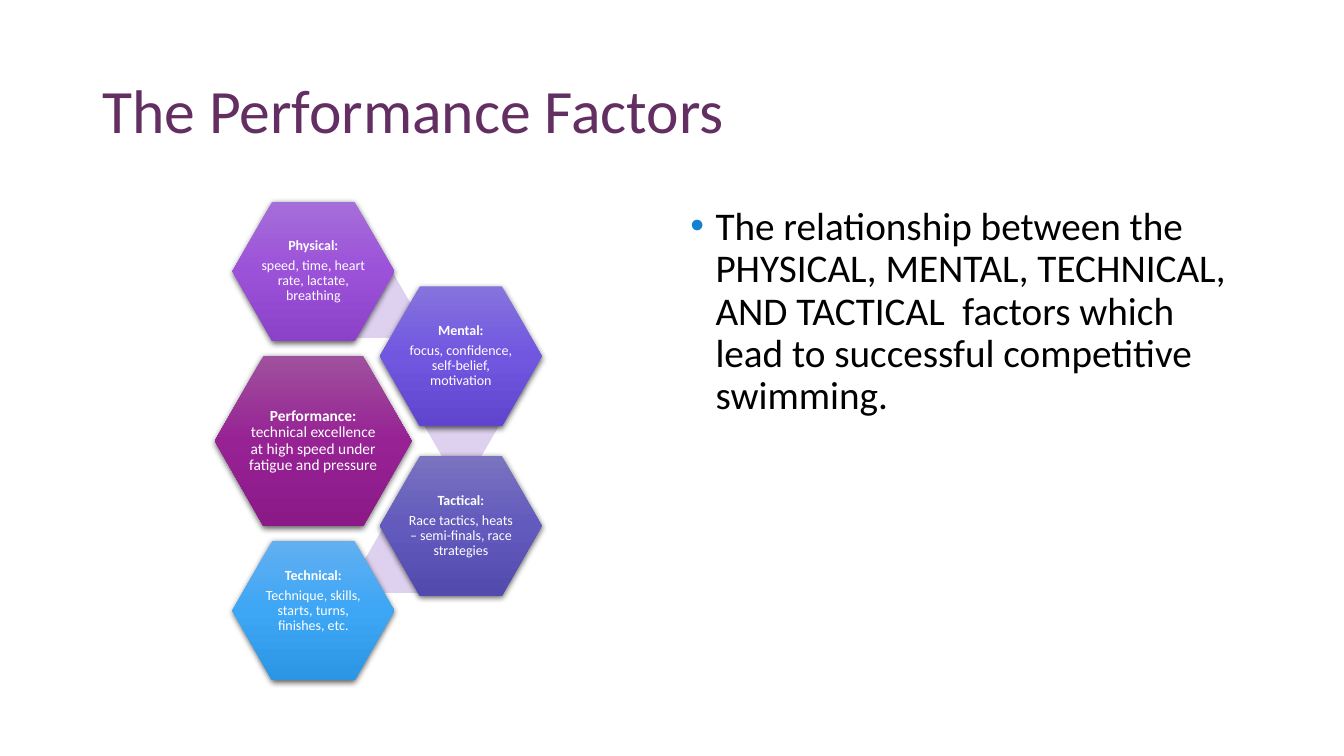
from lxml.etree import SubElement
from pptx import Presentation
from pptx.dml.color import RGBColor
from pptx.enum.shapes import MSO_SHAPE
from pptx.enum.text import MSO_ANCHOR, PP_ALIGN
from pptx.oxml import parse_xml
from pptx.oxml.ns import nsdecls, qn
from pptx.util import Pt

FONT = "Calibri"
TITLE = "The Performance Factors"
BODY = ("The relationship between the PHYSICAL, MENTAL, TECHNICAL, AND TACTICAL  "
        "factors which lead to successful competitive swimming.")
COLORS = {"title": "632E62", "body": "000000", "bullet": "1480D1",
          "link": "DED1EF", "label": "FFFFFF", "shadow": "000000"}

# Heading, detail, column, steps from the middle row, gradient, space kept below the text
FACTORS = [
    ("Physical:", "speed, time, heart rate, lactate, breathing",
     "left", -2, ("A66ED9", "9C51D9", "8B41C8"), 1),
    ("Mental:", "focus, confidence, self-belief, motivation",
     "right", -1, ("8673DE", "7157DF", "6046CE"), 1),
    ("Tactical:", "Race tactics, heats – semi-finals, race strategies",
     "right", 1, ("7973C0", "625ABD", "534AAD"), 1),
    ("Technical:", "Technique, skills, starts, turns, finishes, etc.",
     "left", 2, ("62AFF1", "3DA6F5", "2C95E4"), 15),
]
PERFORMANCE = ("Performance: ", "technical excellence at high speed under fatigue and pressure")
PERFORMANCE_GRADIENT = ("9F519D", "972294", "8B1988")

COLUMN_CENTERS = {"left": 223.8, "right": 329.2}
MIDDLE_ROW, ROW_STEP = 315, 60.6
PERFORMANCE_SIZE, FACTOR_SIZE, LINK_SIZE = (140.6, 121.6), (115.5, 99.6), (53.3, 45.5)
LINK_CENTERS = [(267.8, 218.6), (329.8, 304.2), (286.6, 400.7)]


def style_run(run, size, color, bold=False):
    run.font.name = FONT
    run.font.size = Pt(size)
    run.font.bold = bold
    run.font.color.rgb = RGBColor.from_string(COLORS[color])


def add_text(slide, box, text, size, color):
    text_frame = slide.shapes.add_textbox(*map(Pt, box)).text_frame
    text_frame.word_wrap = True
    text_frame.text = text
    style_run(text_frame.paragraphs[0].runs[0], size, color)
    return text_frame


def add_hexagon(slide, center, size, adjustment):
    (x, y), (width, height) = center, size
    shape = slide.shapes.add_shape(MSO_SHAPE.HEXAGON, Pt(x - width / 2), Pt(y - height / 2),
                                   Pt(width), Pt(height))
    shape.adjustments[0] = adjustment
    shape.shadow.inherit = False
    shape.line.fill.background()
    return shape


def add_link(slide, center):
    shape = add_hexagon(slide, center, LINK_SIZE, 0.289)
    shape.fill.solid()
    shape.fill.fore_color.rgb = RGBColor.from_string(COLORS["link"])


def add_cell(slide, center, size, gradient, inset, bottom_inset):
    """Add a hexagon with a top-to-bottom gradient and a soft shadow; return its text frame."""
    shape = add_hexagon(slide, center, size, 0.286)
    shape.fill.background()
    properties = shape._element.spPr
    stops = "".join(f'<a:gs pos="{index * 50000}"><a:srgbClr val="{color}"/></a:gs>'
                    for index, color in enumerate(gradient))
    properties.replace(properties.find(qn("a:noFill")), parse_xml(
        f'<a:gradFill {nsdecls("a")} rotWithShape="1"><a:gsLst>{stops}</a:gsLst>'
        '<a:lin ang="5400000" scaled="0"/></a:gradFill>'))
    properties.find(qn("a:effectLst")).append(parse_xml(
        f'<a:outerShdw {nsdecls("a")} blurRad="{Pt(4.5)}" dist="{Pt(1.5)}" dir="5400000" '
        f'algn="ctr" rotWithShape="0"><a:srgbClr val="{COLORS["shadow"]}">'
        '<a:alpha val="63000"/></a:srgbClr></a:outerShdw>'))
    text_frame = shape.text_frame
    text_frame.word_wrap = True
    text_frame.vertical_anchor = MSO_ANCHOR.MIDDLE
    text_frame.margin_left = text_frame.margin_right = text_frame.margin_top = Pt(inset)
    text_frame.margin_bottom = Pt(bottom_inset)
    return text_frame


def format_cell(text_frame, size):
    """Centre the paragraphs and set the first run, the heading, in bold."""
    for paragraph in text_frame.paragraphs:
        paragraph.alignment = PP_ALIGN.CENTER
        paragraph.line_spacing = 0.9
        paragraph.space_after = Pt(size * 0.35)
    runs = [run for paragraph in text_frame.paragraphs for run in paragraph.runs]
    for index, run in enumerate(runs):
        style_run(run, size, "label", bold=index == 0)


def add_bullet(paragraph):
    properties = paragraph._p.get_or_add_pPr()
    properties.set("marL", str(Pt(18)))
    properties.set("indent", str(Pt(-18)))
    color = SubElement(properties, qn("a:buClr"))
    SubElement(color, qn("a:srgbClr")).set("val", COLORS["bullet"])
    SubElement(properties, qn("a:buFont")).set("typeface", "Arial")
    SubElement(properties, qn("a:buChar")).set("char", "•")


def main():
    presentation = Presentation()
    presentation.slide_width, presentation.slide_height = Pt(960), Pt(540)
    slide = presentation.slides.add_slide(presentation.slide_layouts[6])

    title = add_text(slide, (66, 28.8, 828, 104.4), TITLE, 44, "title")
    title.vertical_anchor = MSO_ANCHOR.MIDDLE
    title.paragraphs[0].line_spacing = 0.9

    body = add_text(slide, (486, 144, 408, 342.6), BODY, 28, "body").paragraphs[0]
    add_bullet(body)
    body.line_spacing = 0.9

    for center in LINK_CENTERS:
        add_link(slide, center)

    performance = add_cell(slide, (COLUMN_CENTERS["left"], MIDDLE_ROW), PERFORMANCE_SIZE,
                           PERFORMANCE_GRADIENT, 1.2, 1.2)
    for text in PERFORMANCE:
        performance.paragraphs[0].add_run().text = text
    format_cell(performance, 11)

    for heading, detail, column, steps, gradient, bottom_inset in FACTORS:
        center = (COLUMN_CENTERS[column], MIDDLE_ROW + steps * ROW_STEP)
        factor = add_cell(slide, center, FACTOR_SIZE, gradient, 1, bottom_inset)
        factor.text = f"{heading}\n{detail}"
        format_cell(factor, 10)

    presentation.save("out.pptx")


if __name__ == "__main__":
    main()
